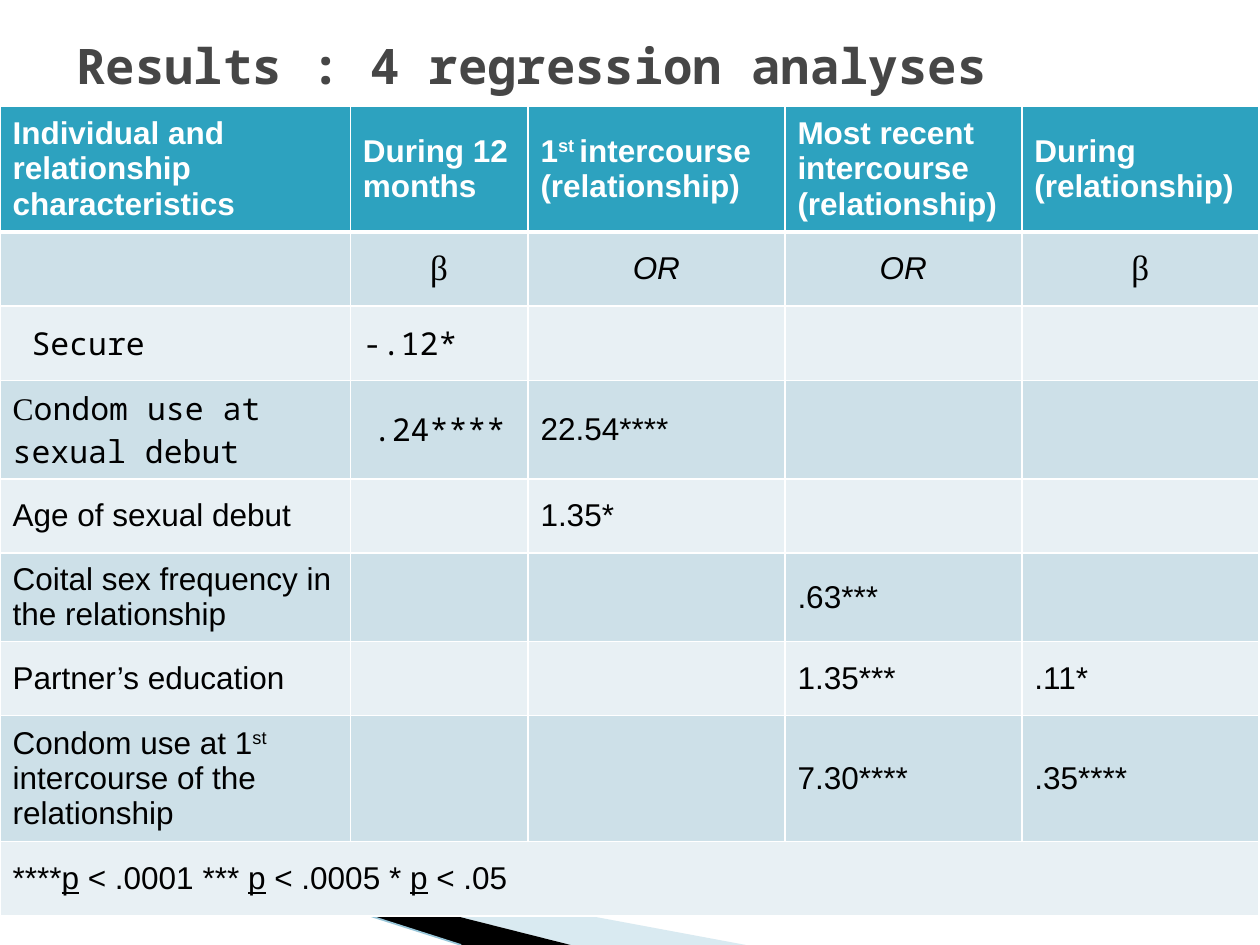
"""Build the regression results slide with its table of coefficients."""
from lxml.etree import SubElement
from pptx import Presentation
from pptx.dml.color import RGBColor
from pptx.enum.shapes import MSO_CONNECTOR as CONN
from pptx.enum.text import MSO_ANCHOR as ANCHOR, PP_ALIGN as ALIGN
from pptx.oxml.ns import qn
from pptx.util import Inches, Pt

WHITE = RGBColor(255, 255, 255)
BLACK = RGBColor(0, 0, 0)
GREY = RGBColor(0x46, 0x46, 0x46)
TEAL = RGBColor(0x2D, 0xA2, 0xBF)
BAND_DARK = RGBColor(0xCD, 0xE0, 0xE8)
BAND_LIGHT = RGBColor(0xE8, 0xF0, 0xF4)
WEDGE_BLUE = RGBColor(0xA0, 0xCB, 0xDC)
EDGE_BLUE = RGBColor(0x97, 0xC5, 0xD8)
SANS, MONO, SERIF = "Arial", "Noto Sans Mono", "Times New Roman"

TITLE = "Results : 4 regression analyses"
BETA = [("β", "serif large")]
OR = [("OR", "italic")]
P = ("p", "under")
ROWS = [
    ["Individual and relationship characteristics", "During 12 months",
     [("1", ""), ("st ", "super"), ("intercourse (relationship)", "")],
     "Most recent intercourse (relationship)", "During (relationship)"],
    ["", BETA, OR, OR, BETA],
    [[("Secure", "mono")], [("-.12*", "mono")], "", "", ""],
    [[("C", "serif"), ("ondom use at sexual debut", "mono")],
     [(".24****", "mono")], "22.54****", "", ""],
    ["Age of sexual debut", "", "1.35*", "", ""],
    ["Coital sex frequency in the relationship", "", "", ".63***", ""],
    ["Partner’s education", "", "", "1.35***", ".11*"],
    [[("Condom use at 1", ""), ("st", "super"), (" intercourse of the relationship", "")],
     "", "", "7.30****", ".35****"],
    [[("****", ""), P, (" < .0001 *** ", ""), P, (" < .0005 * ", ""), P, (" < .05", "")],
     "", "", "", ""],
]
COL_WIDTHS = [2.78, 1.41, 2.04, 1.88, 1.88]
ROW_HEIGHTS = [1, 0.59, 0.59, 0.7, 0.59, 0.7, 0.59, 1, 0.59]
CENTERED = {(1, 1), (1, 2), (1, 3), (1, 4), (3, 1)}
INDENTED = {(2, 0): 0.15}
WEDGES = [
    (WEDGE_BLUE, 40, [(0.55, 6.5), (5.92, 7.5), (4.53, 7.5)]),
    (BLACK, 100, [(0.53, 6.49), (4.53, 7.5), (3.66, 7.5)]),
]


def add_run(p, text, style, color, bold):
    r = p.add_run()
    r.text = text
    f = r.font
    f.name = MONO if "mono" in style else SERIF if "serif" in style else SANS
    f.size = Pt(20 if "large" in style else 18)
    f.bold = bold
    f.italic = "italic" in style
    f.underline = "under" in style
    f.color.rgb = color
    if "super" in style:
        f._element.set("baseline", "30000")


def add_borders(cell, bottom):
    tc_pr = cell._tc.get_or_add_tcPr()
    for side, width in (("L", 1), ("R", 1), ("T", 1), ("B", bottom)):
        ln = SubElement(tc_pr, qn(f"a:ln{side}"), w=str(Pt(width)))
        SubElement(SubElement(ln, qn("a:solidFill")), qn("a:srgbClr"), val=str(WHITE))


def add_wedges(s):
    for color, alpha, points in WEDGES:
        points = [(Inches(x), Inches(y)) for x, y in points]
        fb = s.shapes.build_freeform(*points[0])
        fb.add_line_segments(points[1:], close=True)
        sp = fb.convert_to_shape()
        sp.shadow.inherit = False
        sp.line.fill.background()
        sp.fill.solid()
        sp.fill.fore_color.rgb = color
        if alpha < 100:
            clr = sp._element.spPr.find(qn("a:solidFill")).find(qn("a:srgbClr"))
            SubElement(clr, qn("a:alpha"), val=str(alpha * 1000))
    edge = s.shapes.add_connector(CONN.STRAIGHT, 0, Inches(6.33), Inches(3.66), Inches(7.5))
    edge.line.color.rgb = EDGE_BLUE
    edge.line.width = Pt(0.95)
    SubElement(edge._element.spPr, qn("a:effectLst"))


def add_results_table(s):
    table = s.shapes.add_table(len(ROWS), len(COL_WIDTHS), 0, Inches(0.84),
                               Inches(sum(COL_WIDTHS)), Inches(sum(ROW_HEIGHTS))).table
    for col, width in zip(table.columns, COL_WIDTHS):
        col.width = Inches(width)
    for row, height in zip(table.rows, ROW_HEIGHTS):
        row.height = Inches(height)
    for i, row in enumerate(ROWS):
        header = i == 0
        for j, content in enumerate(row):
            cell = table.cell(i, j)
            add_borders(cell, 3 if header else 1)
            cell.fill.solid()
            cell.fill.fore_color.rgb = TEAL if header else BAND_DARK if i % 2 else BAND_LIGHT
            cell.vertical_anchor = ANCHOR.MIDDLE
            cell.margin_left = Inches(0.1 + INDENTED.get((i, j), 0))
            p = cell.text_frame.paragraphs[0]
            p.alignment = ALIGN.CENTER if (i, j) in CENTERED else ALIGN.LEFT
            runs = [(content, "")] if isinstance(content, str) else content
            for text, style in runs:
                if text:
                    add_run(p, text, style, WHITE if header else BLACK, header)
    last = len(ROWS) - 1
    table.cell(last, 0).merge(table.cell(last, len(COL_WIDTHS) - 1))


def add_title(s):
    tf = s.shapes.add_textbox(Inches(0.51), Inches(0.13), Inches(9), Inches(0.77)).text_frame
    tf.word_wrap = True
    tf.vertical_anchor = ANCHOR.MIDDLE
    r = tf.paragraphs[0].add_run()
    r.text = TITLE
    r.font.name = MONO
    r.font.size = Pt(28)
    r.font.bold = True
    r.font.color.rgb = GREY


def main():
    prs = Presentation()
    prs.slide_width, prs.slide_height = Inches(10), Inches(7.5)
    s = prs.slides.add_slide(prs.slide_layouts[6])
    add_wedges(s)
    add_results_table(s)
    add_title(s)
    prs.save("out.pptx")


if __name__ == "__main__":
    main()
